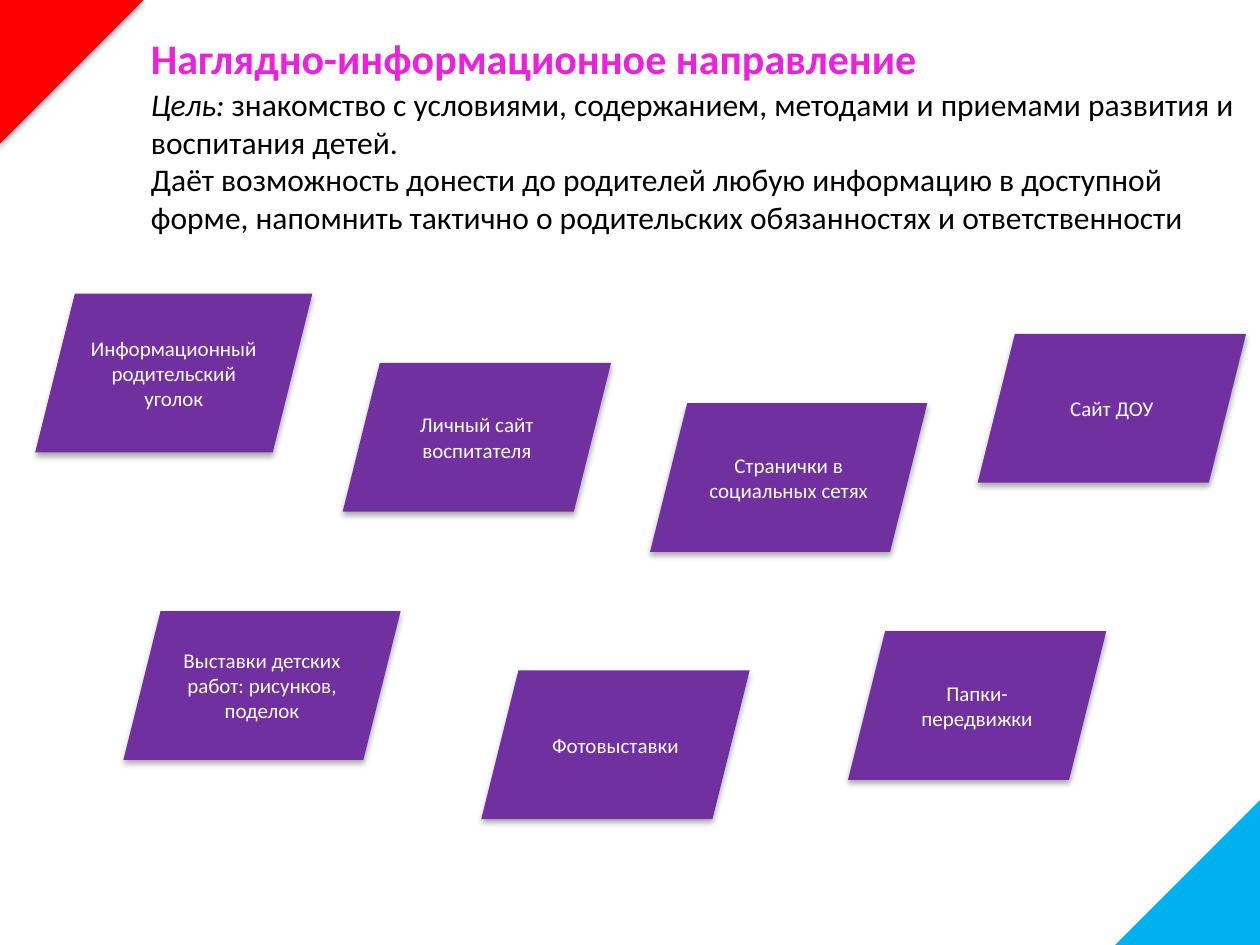
from dataclasses import dataclass

from lxml import etree
from pptx import Presentation
from pptx import util as u
from pptx.dml.color import RGBColor
from pptx.enum import shapes, text
from pptx.oxml import ns


@dataclass(frozen=True)
class Theme:
    font: str = "Calibri"
    heading: str = "EC20DD"
    body: str = "000000"
    card: str = "7030A0"
    card_text: str = "FFFFFF"
    top_corner: str = "FF0000"
    bottom_corner: str = "00B0F0"
    shadow: str = "000000"
    heading_size: int = 24
    body_size: int = 18
    card_size: int = 12


theme = Theme()


def add_span(para, words, *, size, color, bold=False, italic=False):
    span = para.add_run()
    span.text = words
    span.font.name = theme.font
    span.font.size = u.Pt(size)
    span.font.color.rgb = RGBColor.from_string(color)
    span.font.bold = bold
    span.font.italic = italic


def add_shadowed_shape(kind, left, top, width, height, color):
    shape = page.shapes.add_shape(
        kind, u.Inches(left), u.Inches(top), u.Inches(width), u.Inches(height))
    shape.fill.solid()
    shape.fill.fore_color.rgb = RGBColor.from_string(color)
    shape.line.fill.background()
    shape.shadow.inherit = False
    effects = shape.element.spPr.find(ns.qn("a:effectLst"))
    shadow = etree.SubElement(
        effects, ns.qn("a:outerShdw"), blurRad=str(u.Pt(3.5)),
        dist=str(u.Pt(2.2)), dir="5400000", rotWithShape="0")
    tint = etree.SubElement(shadow, ns.qn("a:srgbClr"), val=theme.shadow)
    etree.SubElement(tint, ns.qn("a:alpha"), val="32000")
    return shape


deck = Presentation()
deck.slide_width, deck.slide_height = u.Inches(10), u.Inches(7.5)
page = deck.slides.add_slide(deck.slide_layouts[6])

# Heading and purpose
box = page.shapes.add_textbox(
    u.Inches(1.1), u.Inches(0.21), u.Inches(8.9), u.Inches(2.03))
frame = box.text_frame
frame.word_wrap = True
add_span(frame.paragraphs[0], "Наглядно-информационное направление",
         size=theme.heading_size, color=theme.heading, bold=True)

body = {"size": theme.body_size, "color": theme.body}
para = frame.add_paragraph()
para.space_before = u.Pt(1)
add_span(para, "Цель:", italic=True, **body)
add_span(para, " знакомство с условиями, содержанием, методами и приемами "
         "развития и воспитания детей.", **body)
add_span(frame.add_paragraph(),
         "Даёт возможность донести до родителей любую информацию в доступной "
         "форме, напомнить тактично о родительских обязанностях и "
         "ответственности", **body)

# Forms of work with parents: left, top, width, height, label
cards = [
    (2.72, 2.88, 2.13, 1.18, "Личный сайт воспитателя"),
    (0.28, 2.33, 2.2, 1.26, "Информационный родительский уголок"),
    (6.73, 5.01, 2.05, 1.18, "Папки-передвижки"),
    (0.98, 4.85, 2.2, 1.18, "Выставки детских работ: рисунков, поделок"),
    (5.16, 3.2, 2.2, 1.18, "Странички в социальных сетях"),
    (7.76, 2.65, 2.13, 1.18, "Сайт ДОУ"),
    (3.82, 5.32, 2.13, 1.18, "Фотовыставки"),
]
for left, top, width, height, label in cards:
    card = add_shadowed_shape(shapes.MSO_SHAPE.PARALLELOGRAM,
                              left, top, width, height, theme.card)
    card.text_frame.vertical_anchor = text.MSO_ANCHOR.MIDDLE
    para = card.text_frame.paragraphs[0]
    para.alignment = text.PP_ALIGN.CENTER
    add_span(para, label, size=theme.card_size, color=theme.card_text)

# Corner triangles
corner_side = 1.15
for left, top, turn, color in [
    (-0.01, 0, 90, theme.top_corner),
    (10 - corner_side, 7.5 - corner_side, 270, theme.bottom_corner),
]:
    corner = add_shadowed_shape(shapes.MSO_SHAPE.RIGHT_TRIANGLE,
                                left, top, corner_side, corner_side, color)
    corner.rotation = turn

deck.save("out.pptx")
